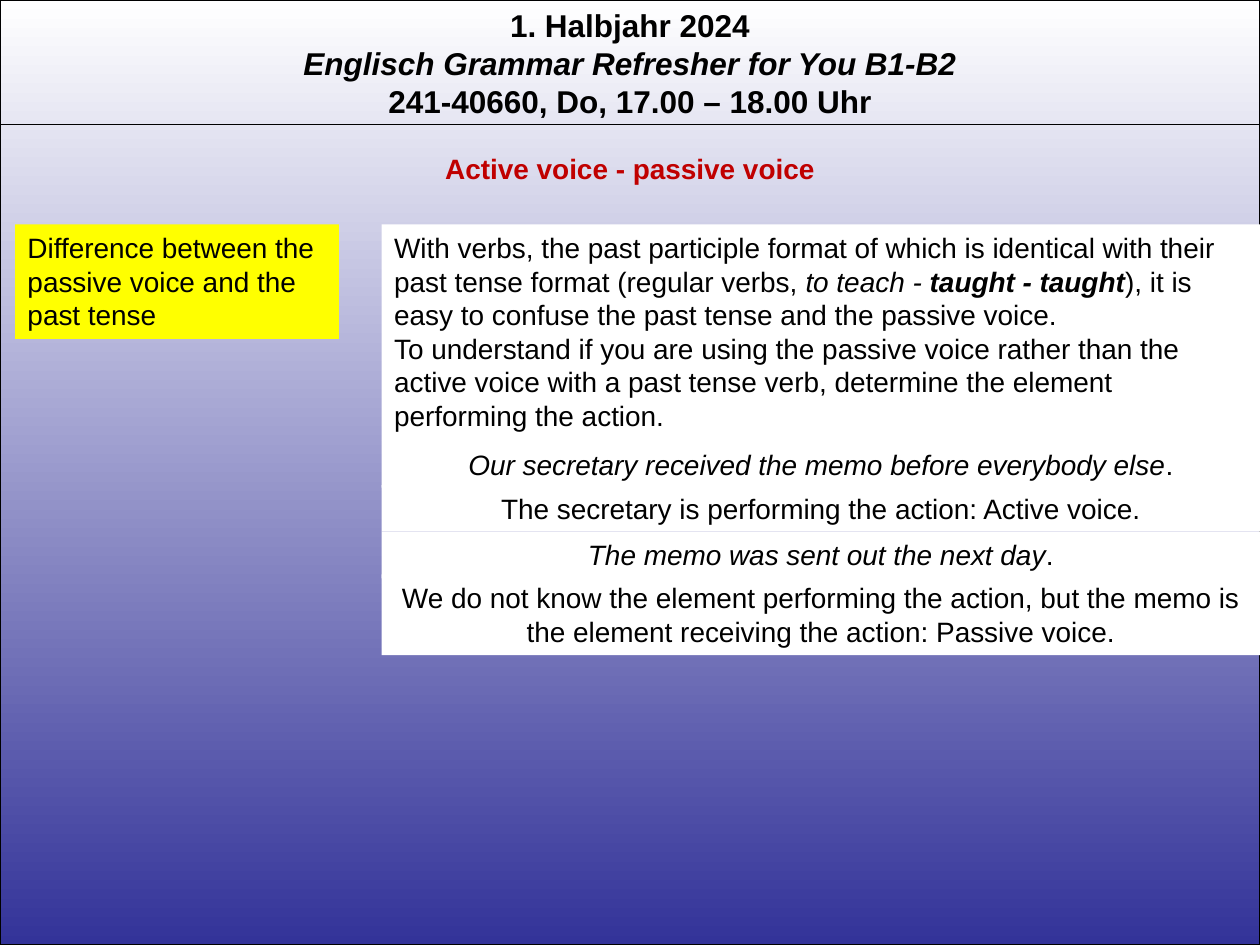
from pptx import Presentation
from pptx.dml.color import RGBColor
from pptx.enum.shapes import MSO_CONNECTOR, MSO_SHAPE
from pptx.enum.text import MSO_ANCHOR, MSO_AUTO_SIZE, PP_ALIGN
from pptx.oxml.ns import qn
from pptx.util import Inches, Pt
from lxml.etree import SubElement

BLACK = RGBColor(0x00, 0x00, 0x00)
WHITE = RGBColor(0xFF, 0xFF, 0xFF)
YELLOW = RGBColor(0xFF, 0xFF, 0x00)
RED = RGBColor(0xC0, 0x00, 0x00)
NAVY = RGBColor(0x33, 0x33, 0x99)

prs = Presentation()
prs.slide_width, prs.slide_height = Inches(10), Inches(7.5)
WIDTH, HEIGHT = prs.slide_width, prs.slide_height
slide = prs.slides.add_slide(prs.slide_layouts[5])
shapes = slide.shapes


def write(box, paragraphs, size=16, color=BLACK, align=PP_ALIGN.LEFT, bold=False):
    """Fill a box with paragraphs, each a list of (text, style); style holds b and/or i."""
    frame = box.text_frame
    frame.word_wrap = True
    frame.auto_size = MSO_AUTO_SIZE.NONE
    frame.vertical_anchor = MSO_ANCHOR.TOP
    for index, runs in enumerate(paragraphs):
        paragraph = frame.add_paragraph() if index else frame.paragraphs[0]
        paragraph.alignment = align
        font = paragraph.font
        font.name, font.size, font.bold = "Arial", Pt(size), bold
        font.color.rgb = color
        for text, style in runs:
            run = paragraph.add_run()
            run.text = text
            if "b" in style:
                run.font.bold = True
            if "i" in style:
                run.font.italic = True


def add_panel(left, top, width, height, color):
    panel = shapes.add_shape(MSO_SHAPE.RECTANGLE, left, top, width, height)
    panel.shadow.inherit = False
    panel.fill.solid()
    panel.fill.fore_color.rgb = color
    panel.line.fill.background()
    return panel


# Backdrop
backdrop = add_panel(0, 0, WIDTH, HEIGHT, WHITE)
backdrop.fill.gradient()
backdrop.fill.gradient_angle = 270
for stop, color, position in zip(backdrop.fill.gradient_stops, (WHITE, NAVY), (0, 1)):
    stop.color.rgb = color
    stop.position = position
backdrop.line.color.rgb = BLACK
backdrop.line.width = Pt(0.75)

# Course header
course = shapes.add_textbox(0, 0, WIDTH, Inches(1.01))
write(course, [[("1. Halbjahr 2024", "")],
               [("Englisch Grammar Refresher for You B1-B2", "i")],
               [("241-40660, Do, 17.00 – 18.00 Uhr", "")]],
      size=18, align=PP_ALIGN.CENTER, bold=True)
rule_y = Inches(0.99)
rule = shapes.add_connector(MSO_CONNECTOR.STRAIGHT, 0, rule_y, WIDTH, rule_y)
rule.line.color.rgb = BLACK
rule.line.width = Pt(0.75)
SubElement(rule._element.spPr, qn("a:effectLst"))

# Topic title, in front of the backdrop
topic = shapes.title
topic.left, topic.top, topic.width, topic.height = 0, Inches(1.15), WIDTH, Inches(0.37)
write(topic, [[("Active voice - passive voice", "")]],
      color=RED, align=PP_ALIGN.CENTER, bold=True)
shapes._spTree.append(topic._element)

# Question on the left, explanation and examples on the right
body_top = Inches(1.78)
question = add_panel(Inches(0.12), body_top, Inches(2.57), Inches(0.91), YELLOW)
write(question, [[("Difference between the passive voice and the past tense", "")]])

column_left = Inches(3.03)
column_width = WIDTH - column_left
LINE = 0.37
examples = [
    (3.5, LINE, [("Our secretary received the memo before everybody else", "i"), (".", "")]),
    (3.85, LINE, [("The secretary is performing the action: Active voice.", "")]),
    (4.22, LINE, [("The memo was sent out the next day", "i"), (".", "")]),
    (4.56, 0.64, [("We do not know the element performing the action, but the memo is "
                   "the element receiving the action: Passive voice.", "")]),
]
explanation = add_panel(column_left, body_top, column_width, Inches(1.72), WHITE)
write(explanation, [
    [("With verbs, the past participle format of which is identical with their "
      "past tense format (regular verbs, ", ""),
     ("to teach - ", "i"),
     ("taught - taught", "bi"),
     ("), it is easy to confuse the past tense and the passive voice.", "")],
    [("To understand if you are using the passive voice rather than the active voice "
      "with a past tense verb, determine the element performing the action.", "")],
])
for top, height, runs in examples:
    example = add_panel(column_left, Inches(top), column_width, Inches(height), WHITE)
    write(example, [runs], align=PP_ALIGN.CENTER)

prs.save("out.pptx")
